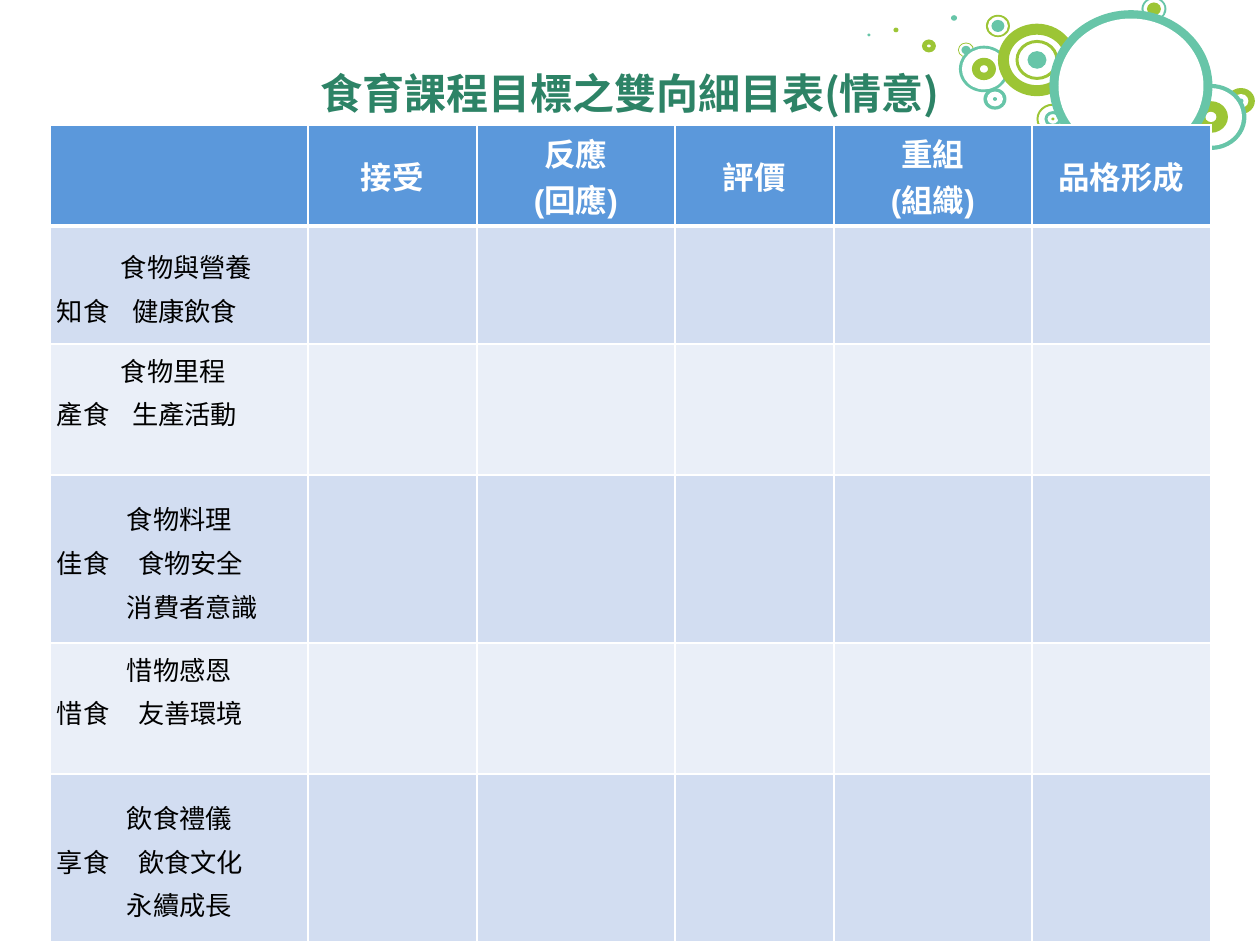
from dataclasses import dataclass

from lxml.etree import SubElement as Sub
from pptx import Presentation
from pptx.dml.color import RGBColor
from pptx.enum.shapes import MSO_SHAPE as Shape
from pptx.enum.text import MSO_ANCHOR as Anchor, PP_ALIGN as Align
from pptx.oxml.ns import qn
from pptx.util import Pt

PX = 914400 // 126
FLAT = 0.93
CJK = "Noto Sans CJK SC"
TEAL = RGBColor(0x67, 0xC5, 0xA8)
LIME = RGBColor(0x9C, 0xC5, 0x35)
WHITE = RGBColor(0xFF, 0xFF, 0xFF)
BLACK = RGBColor(0, 0, 0)
GREEN = RGBColor(0x2D, 0x83, 0x66)
BLUE = RGBColor(0x5B, 0x98, 0xDB)
BANDS = (RGBColor(0xD2, 0xDD, 0xF1), RGBColor(0xEA, 0xEF, 0xF8))


@dataclass
class Disc:
    x: int
    y: int
    layers: tuple


@dataclass
class Ring:
    x: int
    y: int
    size: int
    thick: int
    color: RGBColor


@dataclass
class Row:
    text: str
    height: int
    near: int
    far: int
    foot: int = 0


ART = (
    Disc(1154, 9, ((25, TEAL), (21, WHITE), (14, LIME))),
    Ring(929, 46, 14, 5, LIME),
    Disc(954, 18, ((6, TEAL),)),
    Disc(896, 30, ((5, LIME),)),
    Disc(869, 35, ((3, TEAL),)),
    Disc(966, 50, ((16, LIME), (14, WHITE), (9, TEAL))),
    Disc(995, 99, ((23, TEAL), (16, WHITE), (4, TEAL))),
    Disc(984, 69, ((50, TEAL), (44, WHITE), (24, LIME), (8, WHITE))),
    Disc(1241, 101, ((28, LIME), (15, WHITE), (5, TEAL))),
    Disc(1211, 117, ((71, TEAL), (62, WHITE), (34, LIME), (11, WHITE))),
    Ring(1053, 119, 33, 2, LIME),
    Ring(1053, 119, 17, 3, TEAL),
    Disc(1053, 119, ((3, LIME),)),
    Disc(1036, 62, ((62, WHITE),)),
    Ring(1037, 60, 78, 11, LIME),
    Ring(1037, 60, 43, 3, LIME),
    Disc(1037, 60, ((19, TEAL),)),
    Disc(998, 26, ((24, LIME), (20, WHITE), (13, TEAL))),
    Disc(1131, 86, ((163, TEAL), (145, WHITE))),
)

COLS = (258, 169, 198, 159, 198, 179)
HEADS = ("", "接受", "反應\n(回應)", "評價", "重組\n(組織)", "品格形成")
TOP = 100
ROWS = (
    Row("\t食物與營養\n知食\t健康飲食", 118, 64, 75),
    Row("\t食物里程\n產食\t生產活動", 131, 64, 75, 42),
    Row("\t食物料理\n佳食\t食物安全\n\t消費者意識", 168, 70, 81),
    Row("\t惜物感恩\n惜食\t友善環境", 131, 70, 81, 42),
    Row("\t飲食禮儀\n享食\t飲食文化\n\t永續成長", 168, 70, 81),
)


def write(frame, text: str, size: int, color: RGBColor, font: str = "Arial",
          bold: bool = False, align=Align.LEFT, space: float = 1.0,
          stops: tuple = ()) -> None:
    frame.word_wrap = True
    for i, line in enumerate(text.split("\n")):
        para = frame.add_paragraph() if i else frame.paragraphs[0]
        if stops:
            tabs = Sub(para._p.get_or_add_pPr(), qn("a:tabLst"))
            stop = stops[0] if line.startswith("\t") else stops[1]
            Sub(tabs, qn("a:tab"), pos=str(stop * PX), algn="l")
        para.alignment = align
        para.line_spacing = space
        run = para.add_run()
        run.text = line
        face = run.font
        face.size, face.bold, face.name = Pt(size), bold, font
        face.color.rgb = color
        Sub(run._r.get_or_add_rPr(), qn("a:ea"), typeface=CJK)


def oval(slide, kind, x: int, y: int, size: int, color: RGBColor):
    tall = size * FLAT
    item = slide.shapes.add_shape(
        kind, round((x - size / 2) * PX), round((y - tall / 2) * PX),
        size * PX, round(tall * PX))
    item.shadow.inherit = False
    item.fill.solid()
    item.fill.fore_color.rgb = color
    item.line.fill.background()
    return item


def draw(slide, art) -> None:
    if isinstance(art, Ring):
        item = oval(slide, Shape.DONUT, art.x, art.y, art.size, art.color)
        item.adjustments[0] = art.thick / (art.size * FLAT)
    else:
        for size, color in art.layers:
            oval(slide, Shape.OVAL, art.x, art.y, size, color)


def style(cell, color: RGBColor, top: int = 1, low: int = 1) -> None:
    props = cell._tc.get_or_add_tcPr()
    for side, wide in (("L", 1), ("R", 1), ("T", top), ("B", low)):
        line = Sub(props, qn(f"a:ln{side}"), w=str(Pt(wide)))
        fill = Sub(line, qn("a:solidFill"))
        Sub(fill, qn("a:srgbClr"), val=str(WHITE))
    cell.fill.solid()
    cell.fill.fore_color.rgb = color
    cell.vertical_anchor = Anchor.MIDDLE


def inset(box, side: int, top: int, low: int) -> None:
    box.margin_left = box.margin_right = side * PX
    box.margin_top, box.margin_bottom = top * PX, low * PX


def grid(slide) -> None:
    tall = TOP + sum(row.height for row in ROWS)
    table = slide.shapes.add_table(
        len(ROWS) + 1, len(COLS), 50 * PX, 125 * PX,
        sum(COLS) * PX, tall * PX).table
    for col, wide in zip(table.columns, COLS):
        col.width = wide * PX
    table.rows[0].height = TOP * PX
    for i, head in enumerate(HEADS):
        cell = table.cell(0, i)
        style(cell, BLUE, low=3)
        inset(cell, 9, 5, 5)
        if head:
            write(cell.text_frame, head, 18, WHITE, bold=True,
                  align=Align.CENTER)
    for i, row in enumerate(ROWS):
        table.rows[i + 1].height = row.height * PX
        for j in range(len(COLS)):
            style(table.cell(i + 1, j), BANDS[i % 2], top=1 if i else 3)
        cell = table.cell(i + 1, 0)
        inset(cell, 7, 0, row.foot)
        write(cell.text_frame, row.text, 15, BLACK, space=1.15,
              stops=(row.near, row.far))


def main() -> None:
    deck = Presentation()
    deck.slide_width, deck.slide_height = 1260 * PX, 945 * PX
    slide = deck.slides.add_slide(deck.slide_layouts[5])
    for art in ART:
        draw(slide, art)
    title = slide.shapes.title
    title.left, title.top = 87 * PX, 76 * PX
    title.width, title.height = 1086 * PX, 33 * PX
    frame = title.text_frame
    inset(frame, 0, 0, 0)
    frame.vertical_anchor = Anchor.MIDDLE
    write(frame, "食育課程目標之雙向細目表(情意)", 24, GREEN, CJK, True,
          Align.CENTER)
    slide.shapes._spTree.append(title._element)
    grid(slide)
    deck.save("out.pptx")


if __name__ == "__main__":
    main()
